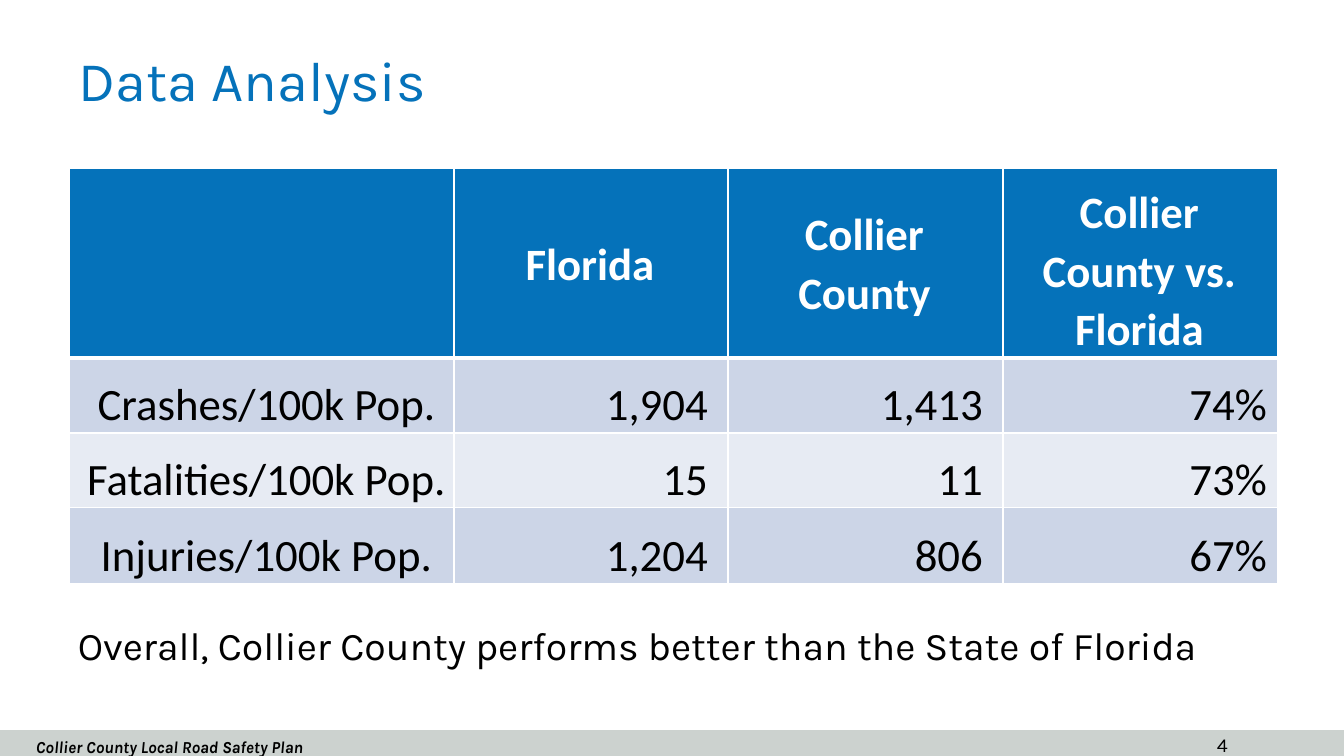
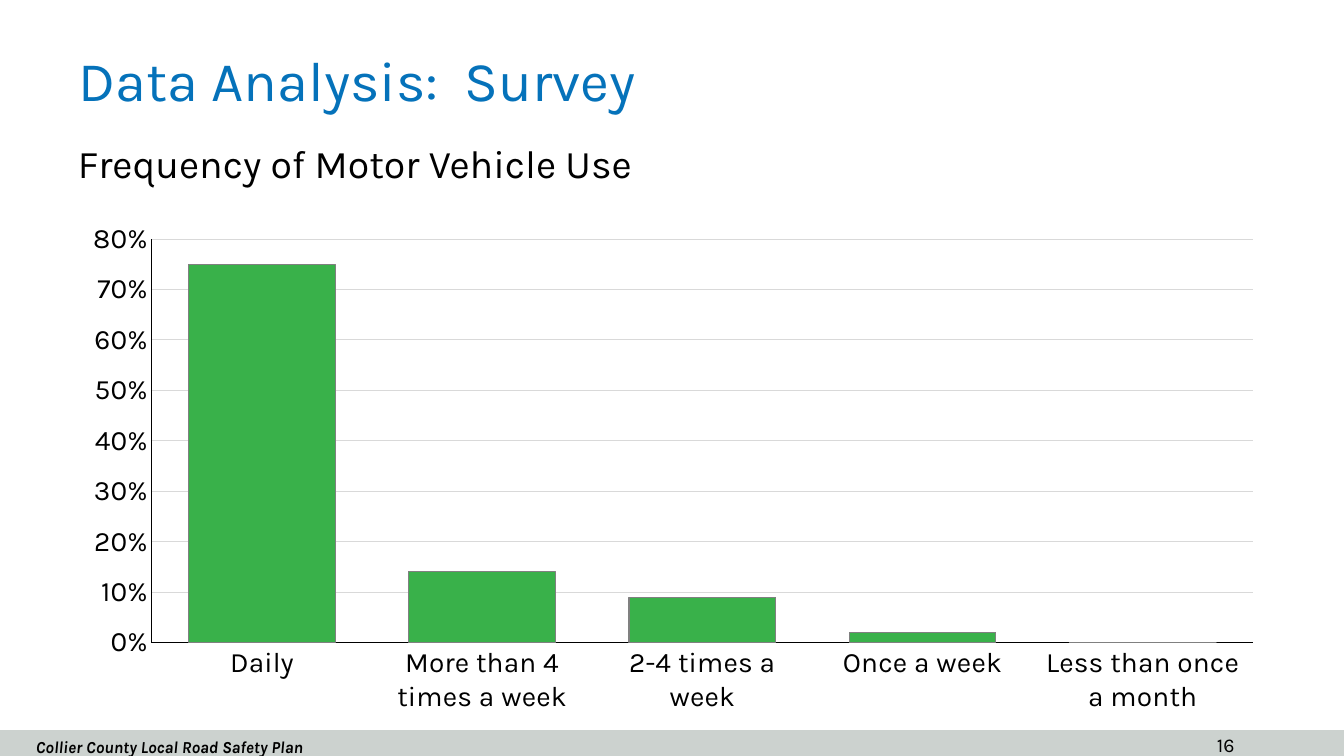
from lxml import etree
from pptx import Presentation
from pptx.chart.data import CategoryChartData
from pptx.dml.color import RGBColor
from pptx.enum.chart import XL_CHART_TYPE, XL_TICK_MARK
from pptx.enum.shapes import MSO_SHAPE
from pptx.enum.text import MSO_ANCHOR, PP_ALIGN
from pptx.oxml.ns import qn
from pptx.util import Emu, Pt

COLUMN = XL_CHART_TYPE.COLUMN_CLUSTERED
NO_TICK = XL_TICK_MARK.NONE
RECT = MSO_SHAPE.RECTANGLE
TOP, MIDDLE, BOTTOM = MSO_ANCHOR.TOP, MSO_ANCHOR.MIDDLE, MSO_ANCHOR.BOTTOM
LEFT, CENTER, RIGHT = PP_ALIGN.LEFT, PP_ALIGN.CENTER, PP_ALIGN.RIGHT

WIDTH, HEIGHT = 1344, 756
EMU_PER_PX = 914400 / 100.8

BLUE, BAND, GREEN = "0572BA", "CCD2CF", "39B14A"
WHITE, BLACK, GRID, OUTLINE = "FFFFFF", "000000", "D9D9D9", "808080"
STRIPES = ("CCD5E7", "E7EBF3")
KARLA, CALIBRI = "Karla", "Calibri"

FOOTER = "Collier County Local Road Safety Plan"
PANELS = [
    ((0, 730, WIDTH, HEIGHT - 730), BAND),
    ((1180, 17, 140, 81), WHITE),
]
RATES = [
    ("", "Florida", "Collier County", "Collier County vs. Florida"),
    ("Crashes/100k Pop.", "1,904", "1,413", "74%"),
    ("Fatalities/100k Pop.", "15", "11", "73%"),
    ("Injuries/100k Pop.", "1,204", "806", "67%"),
]
COL_WIDTHS = (385, 274, 275, 275)
ROW_HEIGHTS = (190, 75, 75, 76)
COL_MARGINS = ((17, 7), (7, 20), (7, 20), (7, 11))
HEADER_MARGINS = (7, 9)
FREQUENCY = {
    "Daily": 0.75,
    "More than 4 times a week": 0.14,
    "2-4 times a week": 0.09,
    "Once a week": 0.02,
    "Less than once a month": 0,
}


def px(value):
    return Emu(round(value * EMU_PER_PX))


def box(x, y, w, h):
    return px(x), px(y), px(w), px(h)


def rgb(value):
    return RGBColor.from_string(value)


def style_font(font, size, color, name=KARLA, bold=False, italic=False):
    font.size, font.name = Pt(size), name
    font.bold, font.italic = bold, italic
    font.color.rgb = rgb(color)


def style_line(line, color):
    line.color.rgb = rgb(color)
    line.width = Pt(0.75)


def write(tf, text, size, color, align=LEFT, spacing=1.0, **style):
    p = tf.paragraphs[0]
    p.alignment, p.line_spacing = align, spacing
    r = p.add_run()
    r.text = text
    style_font(r.font, size, color, **style)


def add_text(s, area, text, size, color=BLACK, anchor=TOP, spacing=1.0, **style):
    tf = s.shapes.add_textbox(*box(*area)).text_frame
    tf.word_wrap = True
    tf.vertical_anchor = anchor
    write(tf, text, size, color, spacing=spacing, **style)


def add_base(prs, title, number):
    s = prs.slides.add_slide(prs.slide_layouts[6])
    for area, color in PANELS:
        panel = s.shapes.add_shape(RECT, *box(*area))
        panel.shadow.inherit = False
        panel.fill.solid()
        panel.fill.fore_color.rgb = rgb(color)
        panel.line.fill.background()
    add_text(s, (69, 48, 1070, 52), title, 40, BLUE, spacing=0.9)
    add_text(s, (26, 736, 830, 22), FOOTER, 12, anchor=MIDDLE, bold=True, italic=True)
    add_text(s, (1207, 728, 57, 28), number, 14)
    return s


def add_statement(s, y, text):
    add_text(s, (68, y, 1208, 60), text, 28, spacing=0.9)


def add_borders(cell, top, bottom):
    tc_pr = cell._tc.get_or_add_tcPr()
    for side, width in (("L", 1), ("R", 1), ("T", top), ("B", bottom)):
        ln = etree.SubElement(tc_pr, qn(f"a:ln{side}"), w=str(Pt(width)))
        fill = etree.SubElement(ln, qn("a:solidFill"))
        etree.SubElement(fill, qn("a:srgbClr"), val=WHITE)


def fill_cell(cell, row, col, text):
    header = row == 0
    add_borders(cell, 3 if row == 1 else 1, 3 if header else 1)
    cell.fill.solid()
    cell.fill.fore_color.rgb = rgb(BLUE if header else STRIPES[(row - 1) % 2])
    left, right = HEADER_MARGINS if header else COL_MARGINS[col]
    cell.margin_left, cell.margin_right = px(left), px(right)
    cell.margin_top = cell.margin_bottom = 0
    cell.vertical_anchor = MIDDLE if header and col < 3 else BOTTOM
    if text:
        write(cell.text_frame, text, 32, WHITE if header else BLACK,
              CENTER if header or col == 0 else RIGHT, 1.07,
              name=CALIBRI, bold=header)


def add_rates(s):
    area = box(69, 168, sum(COL_WIDTHS), sum(ROW_HEIGHTS))
    table = s.shapes.add_table(len(RATES), len(COL_WIDTHS), *area).table
    for column, width in zip(table.columns, COL_WIDTHS):
        column.width = px(width)
    for row, height in zip(table.rows, ROW_HEIGHTS):
        row.height = px(height)
    for i, texts in enumerate(RATES):
        for j, text in enumerate(texts):
            fill_cell(table.cell(i, j), i, j, text)


def add_frequency(s):
    data = CategoryChartData(number_format="0%")
    data.categories = list(FREQUENCY)
    data.add_series("Series 1", list(FREQUENCY.values()))
    chart = s.shapes.add_chart(COLUMN, *box(69, 212, 1208, 512), data).chart
    chart.has_legend = chart.has_title = False
    style_font(chart.font, 10, BLACK)
    for axis in (chart.category_axis, chart.value_axis):
        axis.major_tick_mark = axis.minor_tick_mark = NO_TICK
        style_font(axis.tick_labels.font, 20, BLACK)
        style_line(axis.format.line, BLACK)
    values = chart.value_axis
    values.minimum_scale, values.maximum_scale, values.major_unit = 0, 0.8, 0.1
    values.tick_labels.number_format = "0%"
    values.tick_labels.number_format_is_linked = False
    style_line(values.major_gridlines.format.line, GRID)
    plot = chart.plots[0]
    plot.gap_width, plot.overlap, plot.vary_by_categories = 50, -24, False
    bars = plot.series[0].format
    bars.fill.solid()
    bars.fill.fore_color.rgb = rgb(GREEN)
    style_line(bars.line, OUTLINE)


def main():
    prs = Presentation()
    prs.slide_width, prs.slide_height = px(WIDTH), px(HEIGHT)
    s = add_base(prs, "Data Analysis", "4")
    add_rates(s)
    add_statement(s, 622, "Overall, Collier County performs better than the State of Florida")
    s = add_base(prs, "Data Analysis:  Survey", "16")
    add_frequency(s)
    add_statement(s, 140, "Frequency of Motor Vehicle Use")
    prs.save("out.pptx")


if __name__ == "__main__":
    main()
